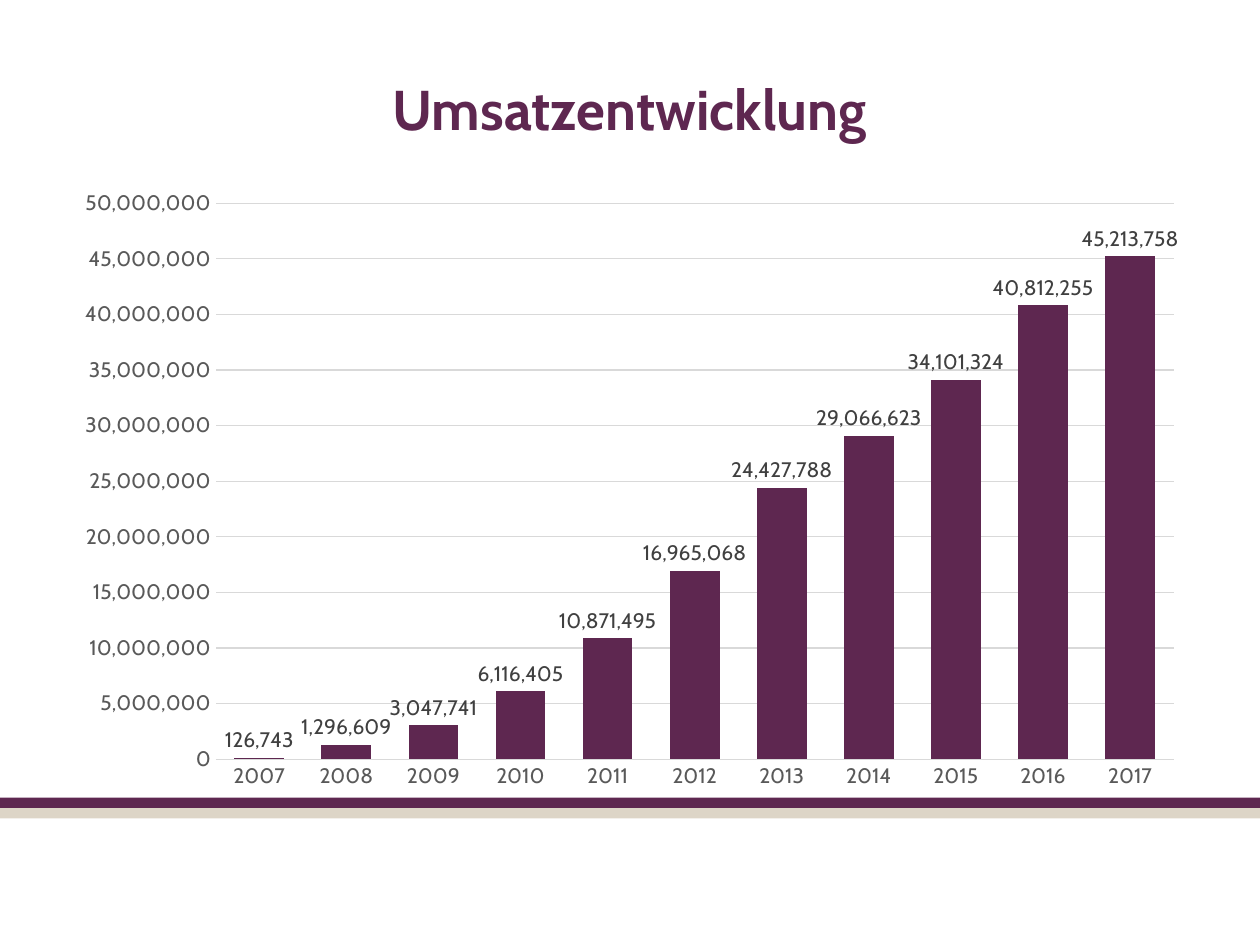
from lxml.etree import SubElement
from pptx import Presentation
from pptx.chart.data import CategoryChartData
from pptx.dml.color import RGBColor
from pptx.enum.chart import XL_CHART_TYPE, XL_LABEL_POSITION, XL_TICK_MARK
from pptx.enum.shapes import MSO_SHAPE
from pptx.enum.text import MSO_ANCHOR, PP_ALIGN
from pptx.oxml.ns import qn
from pptx.util import Cm, Pt

TITLE = "Umsatzentwicklung"
SALES = {
    "2007": 126743,
    "2008": 1296609,
    "2009": 3047741,
    "2010": 6116405,
    "2011": 10871495,
    "2012": 16965068,
    "2013": 24427788,
    "2014": 29066623,
    "2015": 34101324,
    "2016": 40812255,
    "2017": 45213758,
}
COLORS = {
    "plum": "5E2750",
    "sand": "DDD5C7",
    "grid": "D9D9D9",
    "axis": "595959",
    "label": "404040",
}
FONT = "Cabin"
NUMBER_FORMAT = "#,##0"

# Left, top, width, height in centimetres
TITLE_AREA = (4.34, 1.07, 16.71, 2.21)
CHART_AREA = (1.27, 3.61, 22.86, 12.57)
PLOT_AREA = (4.35, 4.1, 19.31, 11.21)
SLIDE_WIDTH, SLIDE_HEIGHT = 25.4, 19.05
BAND_TOP, BAND_HEIGHT = 16.08, 0.21


def color(name):
    return RGBColor.from_string(COLORS[name])


def style_font(font, size, color_name, bold=False):
    font.name = FONT
    font.size = Pt(size)
    font.bold = bold
    font.color.rgb = color(color_name)


def style_line(line, color_name):
    line.color.rgb = color(color_name)
    line.width = Pt(0.75)


def add_band(page, row, color_name):
    band = page.shapes.add_shape(
        MSO_SHAPE.RECTANGLE, 0, Cm(BAND_TOP + row * BAND_HEIGHT),
        Cm(SLIDE_WIDTH), Cm(BAND_HEIGHT))
    band.shadow.inherit = False
    band.fill.solid()
    band.fill.fore_color.rgb = color(color_name)
    band.line.fill.background()


def add_text(page, text, area, size, color_name, bold=False):
    box = page.shapes.add_textbox(*map(Cm, area))
    frame = box.text_frame
    frame.word_wrap = True
    frame.vertical_anchor = MSO_ANCHOR.MIDDLE
    para = frame.paragraphs[0]
    para.alignment = PP_ALIGN.CENTER
    span = para.add_run()
    span.text = text
    style_font(span.font, size, color_name, bold)


def fix_plot_area(chart):
    """Pin the inner plot area, as fractions of the chart frame."""
    left, top, width, height = CHART_AREA
    plot_left, plot_top, plot_width, plot_height = PLOT_AREA
    settings = {
        "layoutTarget": "inner",
        "xMode": "edge",
        "yMode": "edge",
        "x": (plot_left - left) / width,
        "y": (plot_top - top) / height,
        "w": plot_width / width,
        "h": plot_height / height,
    }
    plot_area = chart.element.find(".//" + qn("c:plotArea"))
    layout = plot_area.find(qn("c:layout"))
    if layout is None:
        layout = SubElement(plot_area, qn("c:layout"))
        plot_area.insert(0, layout)
    manual = SubElement(layout, qn("c:manualLayout"))
    for tag, value in settings.items():
        SubElement(manual, qn(f"c:{tag}")).set("val", str(value))


def add_sales_chart(page):
    data = CategoryChartData(number_format=NUMBER_FORMAT)
    data.categories = list(SALES)
    data.add_series("Series 1", list(SALES.values()))
    chart = page.shapes.add_chart(
        XL_CHART_TYPE.COLUMN_CLUSTERED, *map(Cm, CHART_AREA), data).chart
    chart.has_title = False
    chart.has_legend = False
    style_font(chart.font, 12, "axis")

    for axis in (chart.category_axis, chart.value_axis):
        axis.major_tick_mark = XL_TICK_MARK.NONE
        axis.minor_tick_mark = XL_TICK_MARK.NONE
        style_font(axis.tick_labels.font, 12, "axis")
    style_line(chart.category_axis.format.line, "grid")

    values = chart.value_axis
    values.minimum_scale, values.maximum_scale = 0, 50_000_000
    values.major_unit = 5_000_000
    values.tick_labels.number_format = NUMBER_FORMAT
    values.tick_labels.number_format_is_linked = False
    values.format.line.fill.background()
    style_line(values.major_gridlines.format.line, "grid")

    plot = chart.plots[0]
    plot.gap_width = 75
    plot.vary_by_categories = False
    columns = plot.series[0]
    columns.format.fill.solid()
    columns.format.fill.fore_color.rgb = color("plum")
    labels = columns.data_labels
    labels.show_value = True
    labels.position = XL_LABEL_POSITION.OUTSIDE_END
    labels.number_format = NUMBER_FORMAT
    labels.number_format_is_linked = False
    style_font(labels.font, 12, "label")
    fix_plot_area(chart)


def main():
    deck = Presentation()
    deck.slide_width, deck.slide_height = Cm(SLIDE_WIDTH), Cm(SLIDE_HEIGHT)
    page = deck.slides.add_slide(deck.slide_layouts[6])
    for row, color_name in enumerate(("plum", "sand")):
        add_band(page, row, color_name)
    add_text(page, TITLE, TITLE_AREA, size=32, color_name="plum", bold=True)
    add_sales_chart(page)
    deck.save("out.pptx")


if __name__ == "__main__":
    main()
